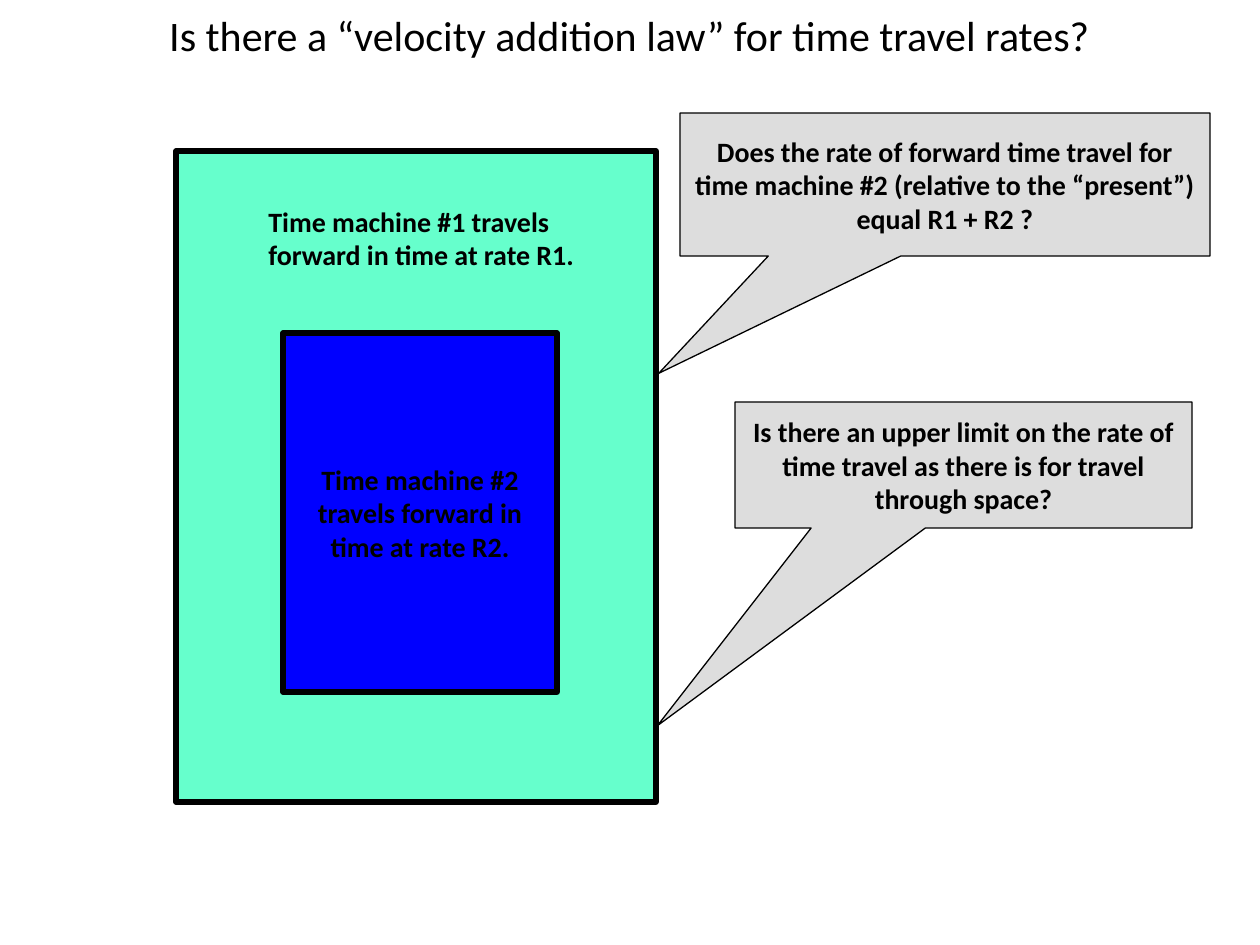
from pptx import Presentation
from pptx.dml.color import RGBColor as RGB
from pptx.enum.shapes import MSO_SHAPE as SHAPE
from pptx.enum.text import MSO_ANCHOR as ANCHOR, MSO_AUTO_SIZE as AUTO, PP_ALIGN as ALIGN
from pptx.util import Pt

PX = 914400 / 126
THEME = {
    "font": "Calibri", "title": Pt(24), "body": Pt(16),
    "ink": RGB(0, 0, 0), "outer": RGB(0x66, 0xFF, 0xCC),
    "inner": RGB(0, 0, 0xFF), "callout": RGB(0xDD, 0xDD, 0xDD),
    "thick": Pt(3), "thin": Pt(0.75),
}


def write(s, lines, size="body", bold=True, align=ALIGN.CENTER, anchor=ANCHOR.MIDDLE, wrap=False):
    tf = s.text_frame
    tf.word_wrap = wrap
    tf.vertical_anchor = anchor
    for i, line in enumerate(lines):
        p = tf.paragraphs[0] if i == 0 else tf.add_paragraph()
        p.alignment = align
        r = p.add_run()
        r.text = line
        r.font.name, r.font.size, r.font.bold = THEME["font"], THEME[size], bold
        r.font.color.rgb = THEME["ink"]


def add_box(kind, box, fill, weight):
    s = slide.shapes.add_shape(kind, *[round(v * PX) for v in box])
    s.shadow.inherit = False
    s.fill.solid()
    s.fill.fore_color.rgb = THEME[fill]
    s.line.color.rgb = THEME["ink"]
    s.line.width = THEME[weight]
    return s


prs = Presentation()
prs.slide_width, prs.slide_height = round(1260 * PX), round(945 * PX)
slide = prs.slides.add_slide(prs.slide_layouts[6])

# Title
title = slide.shapes.add_textbox(*[round(v * PX) for v in (94, 0, 1071, 69)])
write(title, ["Is there a “velocity addition law” for time travel rates?"],
      size="title", bold=False, wrap=True)

# Time machine #2 nested inside time machine #1
add_box(SHAPE.RECTANGLE, (176, 151, 480, 651), "outer", "thick")
machine2 = add_box(SHAPE.RECTANGLE, (283, 333, 274, 359), "inner", "thick")
write(machine2, ["Time machine #2", "travels forward in", "time at rate R2."])

# Label of time machine #1
label = slide.shapes.add_textbox(*[round(v * PX) for v in (256, 198, 348, 81)])
write(label, ["Time machine #1 travels", "forward in time at rate R1."],
      align=ALIGN.LEFT, anchor=ANCHOR.TOP)
label.text_frame.auto_size = AUTO.SHAPE_TO_FIT_TEXT

# Questions: box, pointer tip relative to the box centre, lines
callouts = [
    ((680, 113, 530, 143), (-0.54, 1.32),
     ["Does the rate of forward time travel for",
      "time machine #2 (relative to the “present”)",
      "equal R1 + R2 ?"]),
    ((735, 402, 457, 126), (-0.67, 2.07),
     ["Is there an upper limit on the rate of",
      "time travel as there is for travel",
      "through space?"]),
]
for box, tip, lines in callouts:
    s = add_box(SHAPE.RECTANGULAR_CALLOUT, box, "callout", "thin")
    s.adjustments[0], s.adjustments[1] = tip
    write(s, lines)

prs.save("out.pptx")
